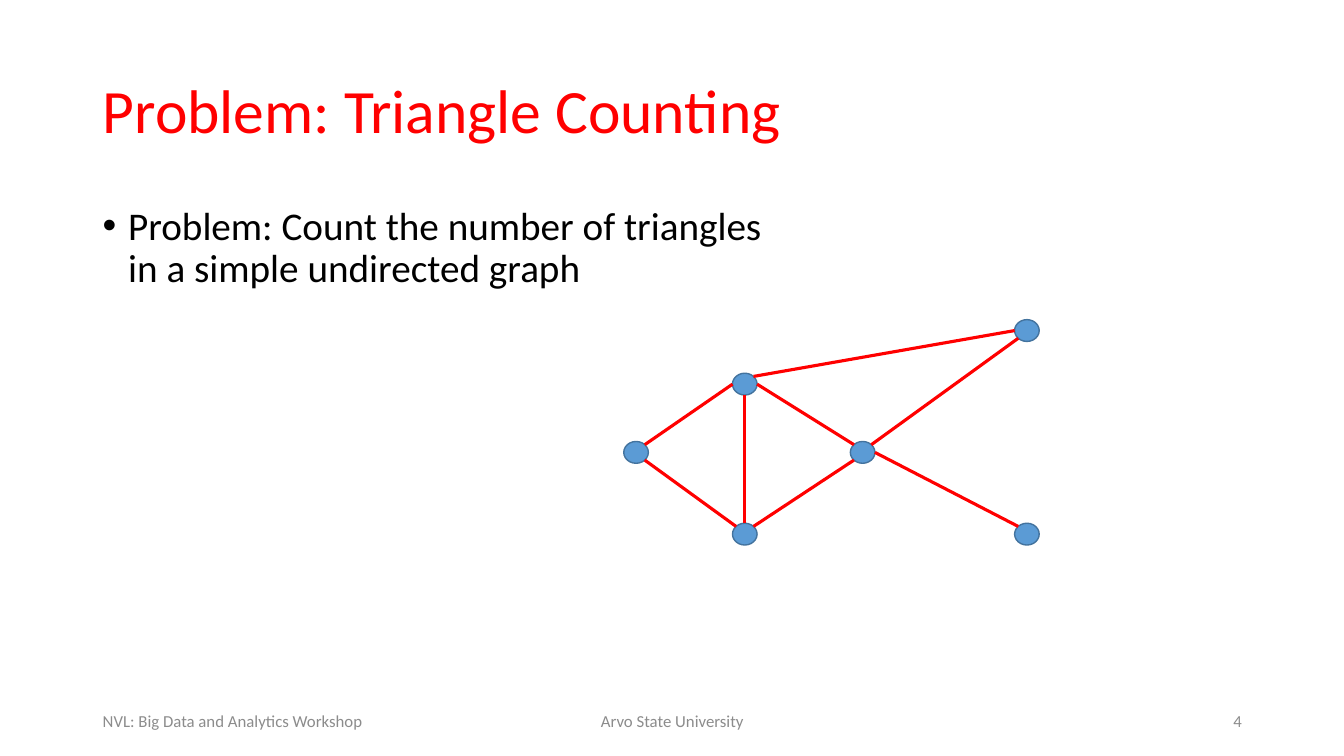
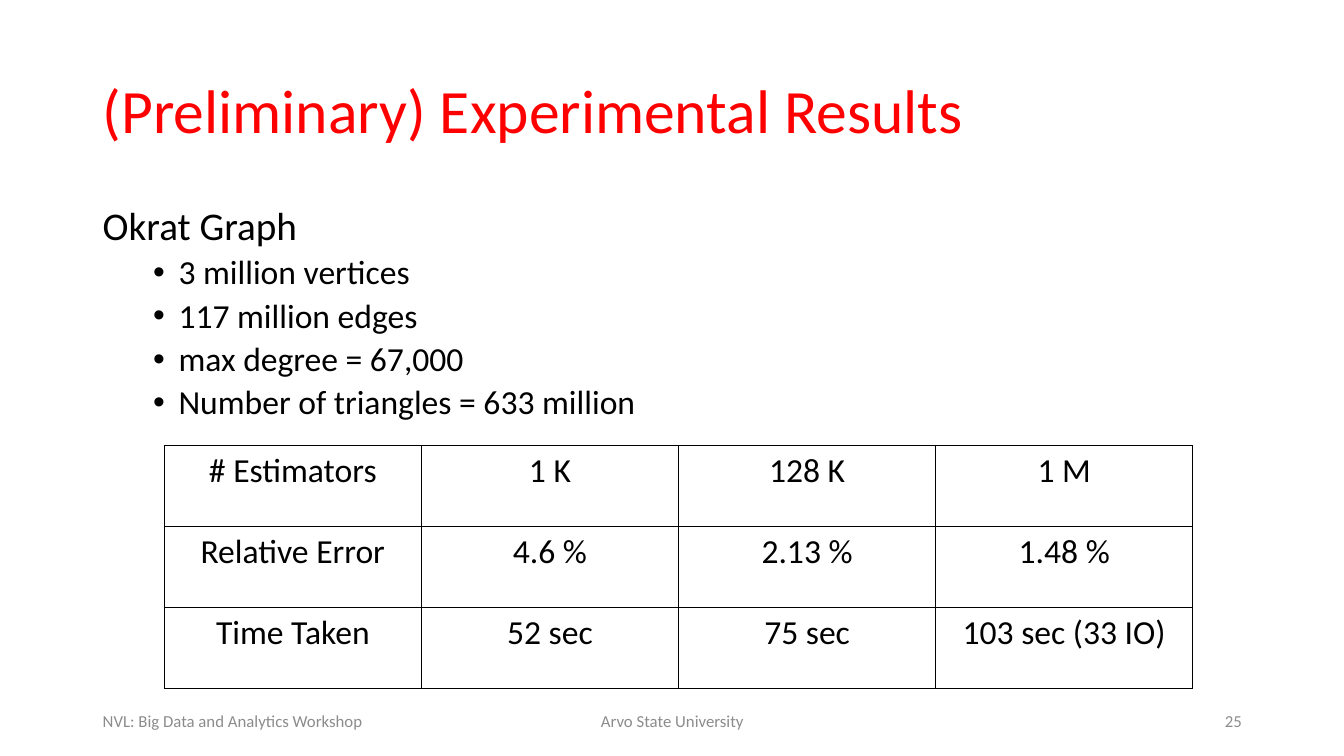
from math import sqrt

from lxml.etree import SubElement
from pptx import Presentation
from pptx.dml.color import RGBColor
from pptx.enum.shapes import MSO_CONNECTOR, MSO_SHAPE
from pptx.enum.text import MSO_ANCHOR, PP_ALIGN
from pptx.oxml.ns import qn
from pptx.util import Cm, Pt

COLORS = {
    "accent": "FF0000",
    "text": "000000",
    "footer": "8C8C8C",
    "node": "5B9BD5",
    "node_line": "43739E",
}
COLORS = {name: RGBColor.from_string(value) for name, value in COLORS.items()}
FONT = "Calibri"
MARGIN, CONTENT_WIDTH = 2.34, 29.21
FOOTER_TOP, FOOTER_HEIGHT = 17.65, 1.02


def add_text(paragraph, text, size, color):
    """Add one run per line of the text, with line breaks between them."""
    for index, line in enumerate(text.split("\n")):
        if index:
            paragraph.add_line_break()
        run = paragraph.add_run()
        run.text = line
        run.font.name = FONT
        run.font.size = Pt(size)
        run.font.color.rgb = COLORS[color]


def add_text_frame(slide, left, top, width, height, anchor):
    box = slide.shapes.add_textbox(Cm(left), Cm(top), Cm(width), Cm(height))
    box.text_frame.word_wrap = True
    box.text_frame.vertical_anchor = anchor
    return box.text_frame


presentation = Presentation()
presentation.slide_width, presentation.slide_height = Cm(33.87), Cm(19.05)

# Paragraph styles: size, space before, left margin, bullet indent
HEADING = (28, 10, 0, 0)
BULLET = (28, 10, 0.64, 0.64)
SUB_BULLET = (24, 5, 1.91, 0.64)

# Each slide: title, page number, body paragraphs
PAGES = [
    ("Problem: Triangle Counting", "4", [
        ("Problem: Count the number of triangles\nin a simple undirected graph", BULLET),
    ]),
    ("(Preliminary) Experimental Results", "25", [
        ("Okrat Graph", HEADING),
        ("3 million vertices", SUB_BULLET),
        ("117 million edges", SUB_BULLET),
        ("max degree = 67,000", SUB_BULLET),
        ("Number of triangles = 633 million", SUB_BULLET),
    ]),
]

slides = []
for title, number, body in PAGES:
    slide = presentation.slides.add_slide(presentation.slide_layouts[6])
    slides.append(slide)

    frame = add_text_frame(slide, MARGIN, 1.02, CONTENT_WIDTH, 3.68, MSO_ANCHOR.MIDDLE)
    frame.paragraphs[0].line_spacing = 0.9
    add_text(frame.paragraphs[0], title, 44, "accent")

    frame = add_text_frame(slide, MARGIN, 5.08, CONTENT_WIDTH, 12.09, MSO_ANCHOR.TOP)
    for index, (text, (size, space, margin, indent)) in enumerate(body):
        paragraph = frame.add_paragraph() if index else frame.paragraphs[0]
        paragraph.line_spacing = 0.9
        paragraph.space_before = Pt(space)
        if indent:
            properties = paragraph._p.get_or_add_pPr()
            properties.set("marL", str(Cm(margin)))
            properties.set("indent", str(-Cm(indent)))
            SubElement(properties, qn("a:buFont"), typeface="Arial")
            SubElement(properties, qn("a:buChar"), char="•")
        add_text(paragraph, text, size, "text")

    footers = [
        ("NVL: Big Data and Analytics Workshop", MARGIN, 7.62, PP_ALIGN.LEFT),
        ("Arvo State University", 11.23, 11.43, PP_ALIGN.CENTER),
        (number, 23.93, 7.62, PP_ALIGN.RIGHT),
    ]
    for text, left, width, alignment in footers:
        frame = add_text_frame(slide, left, FOOTER_TOP, width, FOOTER_HEIGHT, MSO_ANCHOR.MIDDLE)
        frame.paragraphs[0].alignment = alignment
        add_text(frame.paragraphs[0], text, 12, "footer")

graph_slide, results_slide = slides

# Graph: node centres, and edges that join named points on the node outlines
NODE_WIDTH, NODE_HEIGHT = 0.62, 0.55
NODES = {
    "left": (16.03, 11.4),
    "bottom": (18.77, 13.46),
    "top": (18.77, 9.68),
    "hub": (21.74, 11.4),
    "upper right": (25.88, 8.33),
    "lower right": (25.88, 13.46),
}
DIAGONAL = 1 / sqrt(2)
SITES = {
    "N": (0, -1), "S": (0, 1), "W": (-1, 0), "E": (1, 0),
    "NW": (-DIAGONAL, -DIAGONAL), "NE": (DIAGONAL, -DIAGONAL),
    "SW": (-DIAGONAL, DIAGONAL), "SE": (DIAGONAL, DIAGONAL),
}
EDGES = [
    ("left", "NE", "top", "W"),
    ("bottom", "NE", "hub", "SW"),
    ("top", "E", "hub", "NW"),
    ("hub", "NE", "upper right", "SW"),
    ("hub", "E", "lower right", "NW"),
    ("left", "SE", "bottom", "NW"),
    ("bottom", "N", "top", "S"),
    ("top", "NE", "upper right", "W"),
]

for x, y in NODES.values():
    node = graph_slide.shapes.add_shape(
        MSO_SHAPE.OVAL, Cm(x - NODE_WIDTH / 2), Cm(y - NODE_HEIGHT / 2),
        Cm(NODE_WIDTH), Cm(NODE_HEIGHT))
    node.shadow.inherit = False
    node.fill.solid()
    node.fill.fore_color.rgb = COLORS["node"]
    node.line.color.rgb = COLORS["node_line"]
    node.line.width = Pt(1)

for start, start_site, end, end_site in EDGES:
    points = []
    for name, site in ((start, start_site), (end, end_site)):
        x, y = NODES[name]
        across, down = SITES[site]
        points += [Cm(x + across * NODE_WIDTH / 2), Cm(y + down * NODE_HEIGHT / 2)]
    edge = graph_slide.shapes.add_connector(MSO_CONNECTOR.STRAIGHT, *points)
    edge.line.color.rgb = COLORS["accent"]
    edge.line.width = Pt(2.25)
    SubElement(edge._element.spPr, qn("a:effectLst"))

# Results table
RESULTS = [
    ["# Estimators", "1 K", "128 K", "1 M"],
    ["Relative Error", "4.6 %", "2.13 %", "1.48 %"],
    ["Time Taken", "52 sec", "75 sec", "103 sec (33 IO)"],
]
COLUMN_WIDTH, ROW_HEIGHT = 6.48, 2.04
table = results_slide.shapes.add_table(
    len(RESULTS), len(RESULTS[0]), Cm(4.14), Cm(11.23),
    Cm(COLUMN_WIDTH * len(RESULTS[0])), Cm(ROW_HEIGHT * len(RESULTS))).table
table.first_row = False
table.horz_banding = False
for row_index, values in enumerate(RESULTS):
    for column_index, value in enumerate(values):
        cell = table.cell(row_index, column_index)
        properties = cell._tc.get_or_add_tcPr()
        for side in ("lnL", "lnR", "lnT", "lnB"):
            border = SubElement(properties, qn(f"a:{side}"), w=str(Pt(1)))
            fill = SubElement(border, qn("a:solidFill"))
            SubElement(fill, qn("a:srgbClr"), val=str(COLORS["text"]))
        cell.fill.background()
        paragraph = cell.text_frame.paragraphs[0]
        paragraph.alignment = PP_ALIGN.CENTER
        add_text(paragraph, value, 24, "text")

presentation.save("out.pptx")
